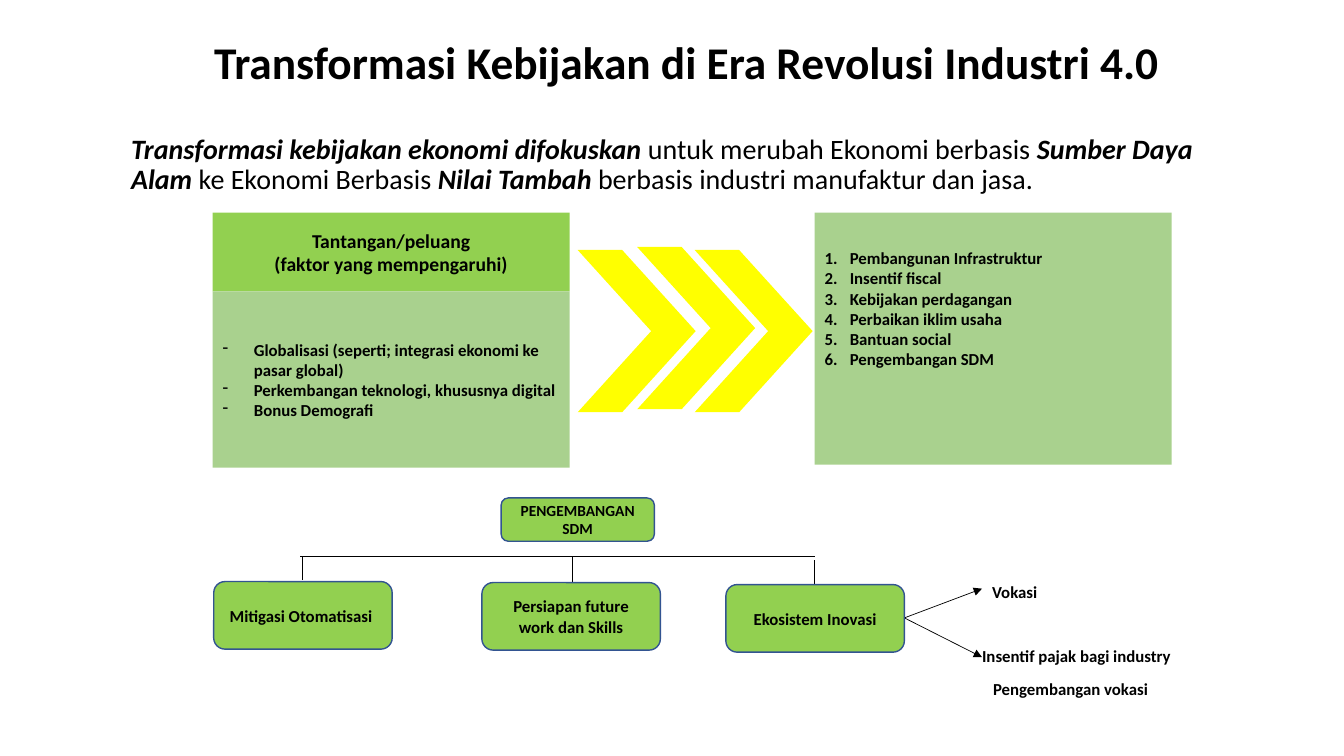
import pptx
import pptx.util
import pptx.dml.color
import pptx.enum.shapes
import pptx.enum.text
import pptx.oxml
import pptx.oxml.ns

PX = 9144  # 100 px to the inch
SHAPE = pptx.enum.shapes.MSO_SHAPE
ALIGN = pptx.enum.text.PP_ALIGN
ANCHOR = pptx.enum.text.MSO_ANCHOR
THEME = {
    "font": "Calibri",
    "ink": "000000", "head": "92D050", "panel": "A9D18E",
    "arrow": "FFFF00", "border": "325491",
    "title": 32.4, "lead": 20, "heading": 14, "text": 12, "root": 11,
}


def write(frame, lines, size, align=ALIGN.CENTER, italic=False,
          spacing=1.0, bullet=None, indent=0, **frame_format):
    """Fill a frame; each line is a tuple of spans, alternately bold and plain."""
    settings = {"word_wrap": True, "auto_size": pptx.enum.text.MSO_AUTO_SIZE.NONE,
                "vertical_anchor": ANCHOR.MIDDLE, **frame_format}
    for name, value in settings.items():
        setattr(frame, name, value)
    for number, spans in enumerate(lines):
        para = frame.add_paragraph() if number else frame.paragraphs[0]
        for name, value in {"alignment": align, "line_spacing": spacing,
                            "space_before": pptx.util.Pt(0)}.items():
            setattr(para, name, value)
        properties = para._p.get_or_add_pPr()
        properties.set("marL", str(indent * PX))
        properties.set("indent", str(-indent * PX))
        tag, attribute, value = bullet or ("a:buNone", None, None)
        mark = pptx.oxml.xmlchemy.OxmlElement(tag)
        if attribute:
            mark.set(attribute, value)
        properties.append(mark)
        for position, words in enumerate(spans):
            strong = position % 2 == 0
            span = para.add_run()
            span.text = words
            for name, value in {"name": THEME["font"], "size": pptx.util.Pt(size),
                                "bold": strong, "italic": strong and italic}.items():
                setattr(span.font, name, value)
            span.font.color.rgb = pptx.dml.color.RGBColor.from_string(THEME["ink"])


def draw(kind, place, fill, border=None, adjustment=None):
    shape = page.shapes.add_shape(kind, *(length * PX for length in place))
    shape.shadow.inherit = False
    shape.fill.solid()
    shape.fill.fore_color.rgb = pptx.dml.color.RGBColor.from_string(THEME[fill])
    if border:
        shape.line.color.rgb = pptx.dml.color.RGBColor.from_string(THEME[border])
        shape.line.width = pptx.util.Pt(1)
    else:
        shape.line.fill.background()
    if adjustment is not None:
        shape.adjustments[0] = adjustment
    return shape


deck = pptx.Presentation()
deck.slide_width, deck.slide_height = 1333 * PX, 750 * PX
page = deck.slides.add_slide(deck.slide_layouts[1])

# Title and lead sentence
title, lead = page.placeholders
for holder, place in ((title, (120, 38, 1122, 85)), (lead, (120, 129, 1122, 75))):
    for name, length in zip(("left", "top", "width", "height"), place):
        setattr(holder, name, length * PX)
write(title.text_frame, [("Transformasi Kebijakan di Era Revolusi Industri 4.0",)],
      THEME["title"], spacing=0.9, vertical_anchor=ANCHOR.TOP, margin_top=2 * PX)
write(lead.text_frame, [(
    "Transformasi kebijakan ekonomi difokuskan ", "untuk merubah Ekonomi berbasis ",
    "Sumber Daya Alam ", "ke Ekonomi Berbasis ",
    "Nilai Tambah ", "berbasis industri manufaktur dan jasa.")],
    THEME["lead"], ALIGN.LEFT, italic=True, spacing=0.9, vertical_anchor=ANCHOR.TOP)

# Challenges and policy panels
heading = draw(SHAPE.ROUNDED_RECTANGLE, (211, 211, 354, 78), "head", adjustment=0)
write(heading.text_frame, [("Tantangan/peluang",), ("(faktor yang mempengaruhi)",)],
      THEME["heading"])
challenges = draw(SHAPE.ROUNDED_RECTANGLE, (211, 289, 354, 175), "panel", adjustment=0)
write(challenges.text_frame, [
    ("Globalisasi (seperti; integrasi ekonomi ke pasar global)",),
    ("Perkembangan teknologi, khususnya digital",),
    ("Bonus Demografi",),
], THEME["text"], ALIGN.LEFT, bullet=("a:buChar", "char", "-"), indent=31)
policies = draw(SHAPE.ROUNDED_RECTANGLE, (808, 211, 354, 250), "panel", adjustment=0)
write(policies.text_frame, [
    ("Pembangunan Infrastruktur",), ("Insentif fiscal",), ("Kebijakan perdagangan",),
    ("Perbaikan iklim usaha",), ("Bantuan social",), ("Pengembangan SDM",),
], THEME["text"], ALIGN.LEFT, bullet=("a:buAutoNum", "type", "arabicPeriod"),
    indent=25, vertical_anchor=ANCHOR.TOP, margin_top=35 * PX)

for left, top in ((573, 248), (632, 245), (689, 248)):
    draw(SHAPE.CHEVRON, (left, top, 117, 161), "arrow", adjustment=0.623)

# Tree lines, then the two arrows
for *ends, has_arrow in (
    (298, 552, 808, 552, False),
    (300, 552, 300, 575, False),
    (568, 552, 568, 580, False),
    (808, 556, 808, 579, False),
    (897, 613, 974, 584, True),
    (897, 613, 974, 652, True),
):
    line = page.shapes.add_connector(pptx.enum.shapes.MSO_CONNECTOR.STRAIGHT,
                                     *(length * PX for length in ends))
    line.line.color.rgb = pptx.dml.color.RGBColor.from_string(THEME["ink"])
    line.line.width = pptx.util.Pt(0.5)
    if has_arrow:
        tip = pptx.oxml.xmlchemy.OxmlElement("a:tailEnd")
        tip.set("type", "triangle")
        line.line._get_or_add_ln().append(tip)
    line._element.spPr.append(pptx.oxml.xmlchemy.OxmlElement("a:effectLst"))

# Tree boxes
for words, place, size in (
    ("PENGEMBANGAN SDM", (497, 494, 152, 43), "root"),
    ("Mitigasi Otomatisasi ", (212, 577, 177, 67), "text"),
    ("Persiapan future work dan Skills", (478, 578, 177, 67), "text"),
    ("Ekosistem Inovasi", (720, 580, 177, 67), "text"),
):
    node = draw(SHAPE.ROUNDED_RECTANGLE, place, "head", "border")
    write(node.text_frame, [(words,)], THEME[size])

# Labels beside the arrows
for words, left, middle in (
    ("Vokasi", 984, 587),
    ("Insentif pajak bagi industry", 974, 651),
    ("Pengembangan vokasi", 985, 683),
):
    box = page.shapes.add_textbox(left * PX, (middle - 12) * PX, 220 * PX, 24 * PX)
    write(box.text_frame, [(words,)], THEME["text"], ALIGN.LEFT,
          margin_left=0, margin_right=0, margin_top=0, margin_bottom=0)

deck.save("out.pptx")
